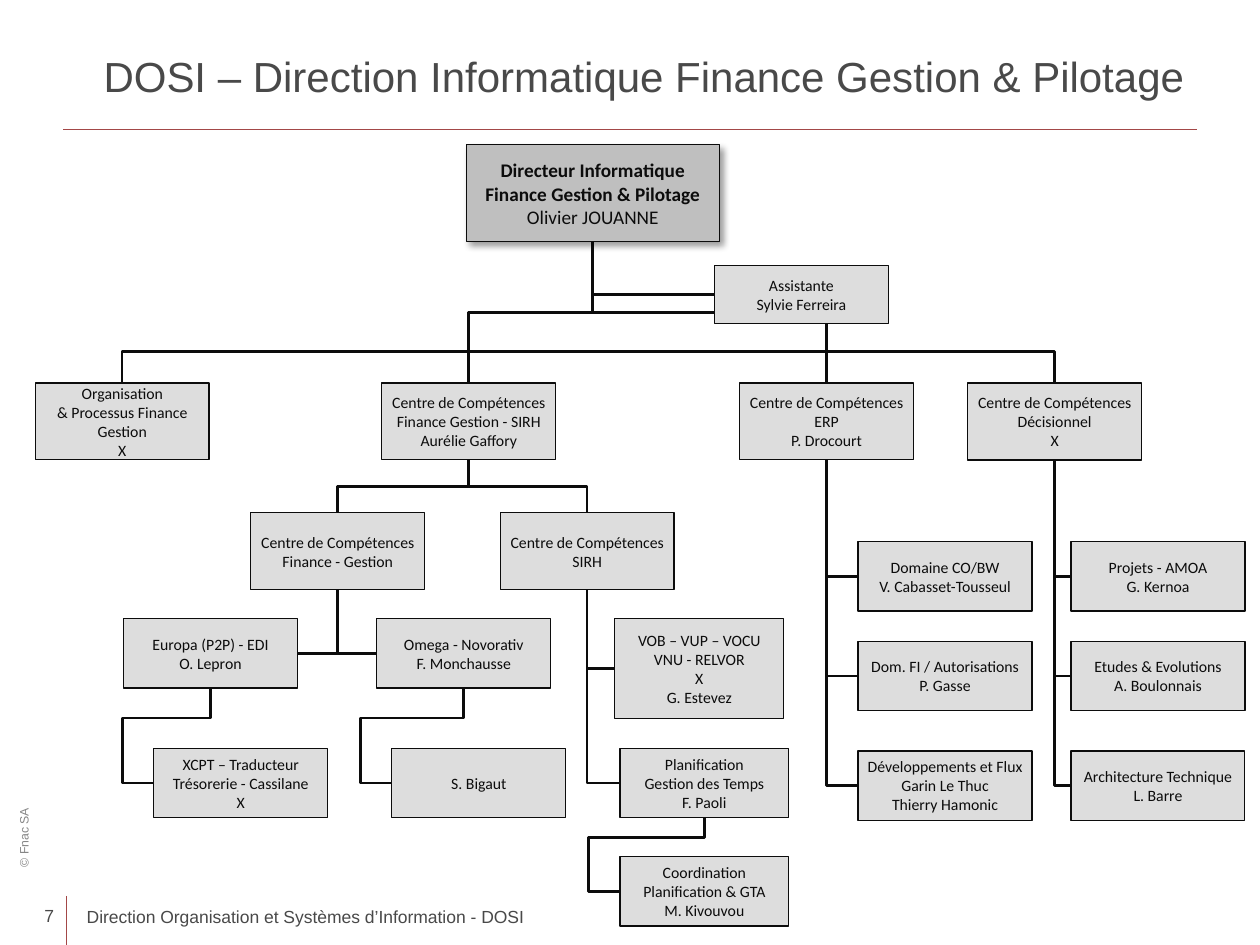
"""Build the organisation chart slide of the finance IT department."""
from dataclasses import dataclass

from lxml import etree
from pptx import Presentation
from pptx.dml.color import RGBColor
from pptx.enum import shapes, text
from pptx.oxml import ns
from pptx.util import Inches, Pt


@dataclass(frozen=True)
class Theme:
    ink: str = "0C0C0C"
    grey_text: str = "494949"
    pale_text: str = "868686"
    rule: str = "A34747"
    box: str = "DDDDDD"
    head: str = "BFBFBF"
    chart_font: str = "Calibri"
    page_font: str = "Arial"
    title_size: float = 24
    head_size: float = 11
    footer_size: float = 10
    box_size: float = 9
    small_size: float = 7


theme = Theme()
LEFT, CENTER, RIGHT = text.PP_ALIGN.LEFT, text.PP_ALIGN.CENTER, text.PP_ALIGN.RIGHT
TOP, MIDDLE = text.MSO_ANCHOR.TOP, text.MSO_ANCHOR.MIDDLE


def write_text(shape, content, font, size, color, align, anchor=TOP, **frame_values):
    frame = shape.text_frame
    frame.text = content
    frame_format = {"word_wrap": True, "auto_size": text.MSO_AUTO_SIZE.NONE,
                    "vertical_anchor": anchor, **frame_values}
    for name, value in frame_format.items():
        setattr(frame, name, value)
    for paragraph in frame.paragraphs:
        paragraph.alignment = align
        for run in paragraph.runs:
            for name, value in {"name": font, "size": Pt(size), "bold": False}.items():
                setattr(run.font, name, value)
            run.font.color.rgb = RGBColor.from_string(color)


def connect(begin, end, preset="line", adjustments=(), color=theme.ink, weight=1.5):
    kind = shapes.MSO_CONNECTOR.STRAIGHT if preset == "line" else shapes.MSO_CONNECTOR.ELBOW
    connector = slide.shapes.add_connector(kind, *[Inches(value) for value in (*begin, *end)])
    connector.line.color.rgb = RGBColor.from_string(color)
    connector.line.width = Pt(weight)
    properties = connector._element.spPr
    etree.SubElement(properties, ns.qn("a:effectLst"))
    geometry = properties.find(ns.qn("a:prstGeom"))
    geometry.set("prst", preset)
    guides = geometry.find(ns.qn("a:avLst"))
    for number, share in enumerate(adjustments, 1):
        etree.SubElement(guides, ns.qn("a:gd"), name=f"adj{number}",
                         fmla=f"val {round(share * 100000)}")
    return connector


presentation = Presentation()
presentation.slide_width, presentation.slide_height = Inches(10), Inches(7.5)
slide = presentation.slides.add_slide(presentation.slide_layouts[5])

title = slide.shapes.title
for name, value in {"left": 0.5, "top": 0.18, "width": 9, "height": 0.84}.items():
    setattr(title, name, Inches(value))
write_text(title, "DOSI – Direction Informatique Finance Gestion & Pilotage",
           theme.page_font, theme.title_size, theme.grey_text, RIGHT, MIDDLE)

connect((0.5, 1.03), (9.5, 1.03), color=theme.rule, weight=0.75)
connect((0.53, 7.11), (0.53, 7.5), color=theme.rule, weight=0.75)

page_texts = [
    ((-0.21, 6.47, 0.8, 0.22), "© Fnac SA", theme.small_size, theme.pale_text, LEFT, 270, 0.1),
    ((0.59, 7.14, 4.97, 0.27), "Direction Organisation et Systèmes d’Information - DOSI",
     theme.footer_size, theme.grey_text, LEFT, 0, 0.1),
    ((-0.03, 7.13, 0.46, 0.37), "7", theme.footer_size, theme.grey_text, RIGHT, 0, 0),
]
for place, content, size, color, align, rotation, inset in page_texts:
    text_box = slide.shapes.add_textbox(*[Inches(value) for value in place])
    text_box.rotation = rotation
    write_text(text_box, content, theme.page_font, size, color, align,
               margin_left=Inches(inset), margin_right=Inches(inset))

RECT, PROCESS = shapes.MSO_SHAPE.RECTANGLE, shapes.MSO_SHAPE.FLOWCHART_PROCESS
centre, team, planning = (1.38, 0.61), (1.38, 0.55), (1.34, 0.55)
centre_row, branch_row, team_row, last_row = 3.04, 4.07, 4.91, 5.94
domain_rows = (4.3, 5.09, 5.96)
domain_column, project_column = 6.81, 8.5
boxes = {
    "director": (3.7, 1.15, (2.01, 0.77), RECT,
                 "Directeur Informatique Finance Gestion & Pilotage\nOlivier JOUANNE"),
    "assistant": (5.67, 2.11, (1.38, 0.46), RECT, "Assistante\nSylvie Ferreira"),
    "organisation": (0.28, centre_row, centre, RECT,
                     "Organisation\n& Processus Finance\nGestion\nX"),
    "finance": (3.03, centre_row, centre, RECT,
                "Centre de Compétences\nFinance Gestion - SIRH\nAurélie Gaffory"),
    "erp": (5.87, centre_row, centre, RECT, "Centre de Compétences\vERP\vP. Drocourt"),
    "decision": (7.68, centre_row, centre, PROCESS, "Centre de Compétences\vDécisionnel\nX"),
    "management": (1.99, branch_row, centre, RECT, "Centre de Compétences\vFinance - Gestion"),
    "hr": (3.97, branch_row, centre, PROCESS, "Centre de Compétences\vSIRH"),
    "europa": (0.98, team_row, team, RECT, "Europa (P2P) - EDI\nO. Lepron"),
    "omega": (2.99, team_row, team, RECT, "Omega - Novorativ\nF. Monchausse"),
    "payroll": (4.88, team_row, (1.34, 0.79), RECT,
                "VOB – VUP – VOCU\vVNU - RELVOR\nX\nG. Estevez"),
    "treasury": (1.22, last_row, team, RECT, "XCPT – Traducteur\nTrésorerie - Cassilane\nX"),
    "bigaut": (3.11, last_row, team, RECT, "S. Bigaut"),
    "planning": (4.92, last_row, planning, PROCESS,
                 "Planification\nGestion des Temps\vF. Paoli"),
    "coordination": (4.92, 6.8, planning, PROCESS,
                     "Coordination\nPlanification & GTA\nM. Kivouvou"),
    "controlling": (domain_column, domain_rows[0], team, RECT,
                    "Domaine CO/BW\nV. Cabasset-Tousseul"),
    "accounting": (domain_column, domain_rows[1], team, RECT,
                   "Dom. FI / Autorisations\nP. Gasse"),
    "development": (domain_column, domain_rows[2], team, RECT,
                    "Développements et Flux\nGarin Le Thuc\nThierry Hamonic"),
    "projects": (project_column, domain_rows[0], team, PROCESS, "Projets - AMOA\nG. Kernoa"),
    "studies": (project_column, domain_rows[1], team, PROCESS,
                "Etudes & Evolutions\nA. Boulonnais"),
    "architecture": (project_column, domain_rows[2], team, RECT,
                     "Architecture Technique\nL. Barre"),
}
above, below, west, east = {}, {}, {}, {}
for name, (left, top, (width, height), *_) in boxes.items():
    above[name] = (left + width / 2, top)
    below[name] = (left + width / 2, top + height)
    west[name] = (left, top + height / 2)
    east[name] = (left + width, top + height / 2)

side_links = {
    "director": ["assistant"],
    "decision": ["projects", "studies", "architecture"],
    "erp": ["controlling", "accounting", "development"],
    "management": ["omega"],
    "hr": ["payroll", "planning"],
}
for parent, children in side_links.items():
    for child in children:
        connect(west[child], below[parent], "bentConnector2")
connect(east["europa"], below["management"], "bentConnector2")

loop_reach = 0.25
for parent, child in [("europa", "treasury"), ("omega", "bigaut"), ("planning", "coordination")]:
    (x1, y1), (x2, y2) = west[child], below[parent]
    bend = (above[child][1] + y2) / 2
    connect((x1, y1), (x2, y2), "bentConnector4",
            (-loop_reach / (x2 - x1), (bend - y1) / (y2 - y1)))

rail = 2.79
tree_links = [(below[parent], above[child], None) for parent, child in
              [("director", "finance"), ("director", "erp"),
               ("finance", "management"), ("finance", "hr")]]
tree_links.append((above["organisation"], above["decision"], rail))
for (x1, y1), (x2, y2), bend in tree_links:
    drop, spread = max(y2 - y1, 0.01), abs(x2 - x1)
    share = 0.5 if bend is None else (bend - y1) / drop
    left, top = (x1 + x2 - drop) / 2, (y1 + y2 - spread) / 2
    link = connect((left, top), (left + drop, top + spread), "bentConnector3", (share,))
    link._element.spPr.xfrm.set("rot", "5400000")
    link._element.spPr.xfrm.set("flipV", "1" if x2 > x1 else "0")

for name, (left, top, size, preset, content) in boxes.items():
    is_head = name == "director"
    shape = slide.shapes.add_shape(preset, *[Inches(value) for value in (left, top, *size)])
    shape.shadow.inherit = False
    shape.fill.solid()
    shape.fill.fore_color.rgb = RGBColor.from_string(theme.head if is_head else theme.box)
    shape.line.color.rgb = RGBColor.from_string(theme.ink)
    shape.line.width = Pt(0.5 if is_head else 0.75)
    margins = {} if is_head else {f"margin_{side}": 0 for side in ("left", "top", "right", "bottom")}
    write_text(shape, content, theme.chart_font, theme.head_size if is_head else theme.box_size,
               theme.ink, CENTER, MIDDLE, **{"word_wrap": is_head, **margins})
    if is_head:
        shape.text_frame.paragraphs[0].runs[0].font.bold = True
        effects = shape._element.spPr.find(ns.qn("a:effectLst"))
        shadow = etree.SubElement(effects, ns.qn("a:outerShdw"), blurRad=str(Pt(4)),
                                  dist=str(Pt(3)), dir="2700000", algn="tl", rotWithShape="0")
        shade = etree.SubElement(shadow, ns.qn("a:srgbClr"), val="000000")
        etree.SubElement(shade, ns.qn("a:alpha"), val="40000")

presentation.save("out.pptx")
